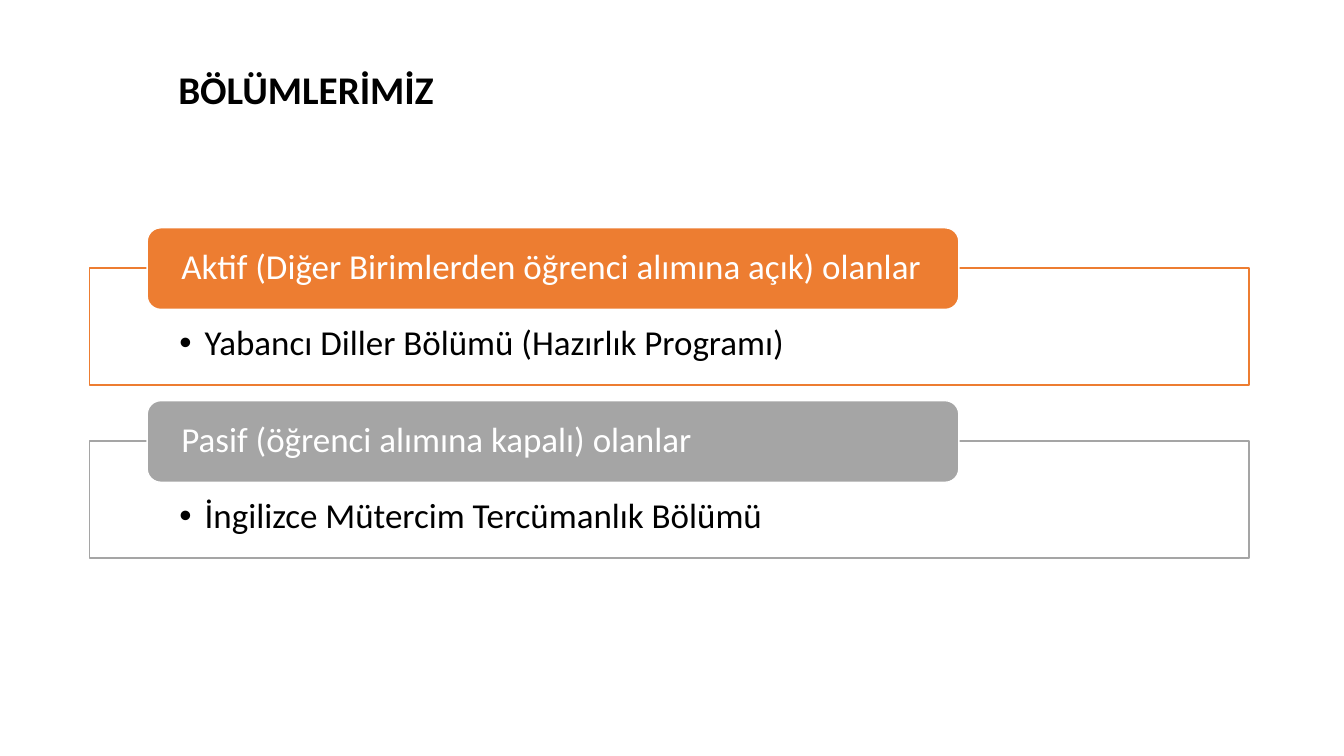
"""Build a slide listing the active and passive departments."""
from dataclasses import dataclass

from lxml import etree
from pptx import Presentation
from pptx.dml.color import RGBColor
from pptx.enum import shapes, text
from pptx.oxml import ns
from pptx.util import Inches, Pt

BLACK, WHITE = "000000", "FFFFFF"
FIRST_TOP, GROUP_STEP = 2.26, 1.715
FRAME_DROP = 0.4


@dataclass
class Group:
    heading: str
    department: str
    colour: str


GROUPS = [
    Group("Aktif (Diğer Birimlerden öğrenci alımına açık) olanlar",
          "Yabancı Diller Bölümü (Hazırlık Programı)", "ED7D31"),
    Group("Pasif (öğrenci alımına kapalı) olanlar",
          "İngilizce Mütercim Tercümanlık Bölümü", "A5A5A5"),
]


def rgb(value: str) -> RGBColor:
    return RGBColor.from_string(value)


def add_bullet(paragraph, indent: float) -> None:
    properties = paragraph._p.get_or_add_pPr()
    properties.set("marL", str(Inches(indent)))
    properties.set("indent", str(-Inches(indent)))
    etree.SubElement(properties, ns.qn("a:buFont"), typeface="Arial")
    etree.SubElement(properties, ns.qn("a:buChar"), char="•")


def write_text(shape, content: str, *, size: float = 25, colour: str = BLACK,
               bold: bool = False, bullet: bool = False,
               anchor=text.MSO_ANCHOR.MIDDLE,
               insets: tuple = (0.1, 0.05, 0.1, 0.05)) -> None:
    frame = shape.text_frame
    frame.word_wrap = True
    frame.vertical_anchor = anchor
    (frame.margin_left, frame.margin_top,
     frame.margin_right, frame.margin_bottom) = map(Inches, insets)
    paragraph = frame.paragraphs[0]
    paragraph.alignment = text.PP_ALIGN.LEFT
    paragraph.line_spacing = 0.9
    if bullet:
        add_bullet(paragraph, 0.25)
    run = paragraph.add_run()
    run.text = content
    run.font.name = "Calibri"
    run.font.size = Pt(size)
    run.font.bold = bold
    run.font.color.rgb = rgb(colour)


def add_box(slide, kind, bounds: tuple, fill: str, line: str):
    shape = slide.shapes.add_shape(kind, *map(Inches, bounds))
    shape.shadow.inherit = False
    shape.fill.solid()
    shape.fill.fore_color.rgb = rgb(fill)
    shape.line.color.rgb = rgb(line)
    shape.line.width = Pt(1)
    return shape


def add_group(slide, group: Group, top: float) -> None:
    frame = add_box(slide, shapes.MSO_SHAPE.RECTANGLE,
                    (0.89, top + FRAME_DROP, 11.5, 1.16), WHITE, group.colour)
    write_text(frame, group.department, bullet=True,
               anchor=text.MSO_ANCHOR.TOP, insets=(0.89, 0.57, 0.89, 0.19))
    heading = add_box(slide, shapes.MSO_SHAPE.ROUNDED_RECTANGLE,
                      (1.46, top, 8.05, 0.81), group.colour, WHITE)
    write_text(heading, group.heading, colour=WHITE, insets=(0.3, 0, 0.3, 0))


def main() -> None:
    presentation = Presentation()
    presentation.slide_width = Inches(13.33)
    presentation.slide_height = Inches(7.5)
    slide = presentation.slides.add_slide(presentation.slide_layouts[6])
    title = slide.shapes.add_textbox(*map(Inches, (1.67, 0.4, 8.08, 1.02)))
    write_text(title, "BÖLÜMLERİMİZ", size=28, bold=True)
    for index, group in enumerate(GROUPS):
        add_group(slide, group, FIRST_TOP + index * GROUP_STEP)
    presentation.save("out.pptx")


if __name__ == "__main__":
    main()
